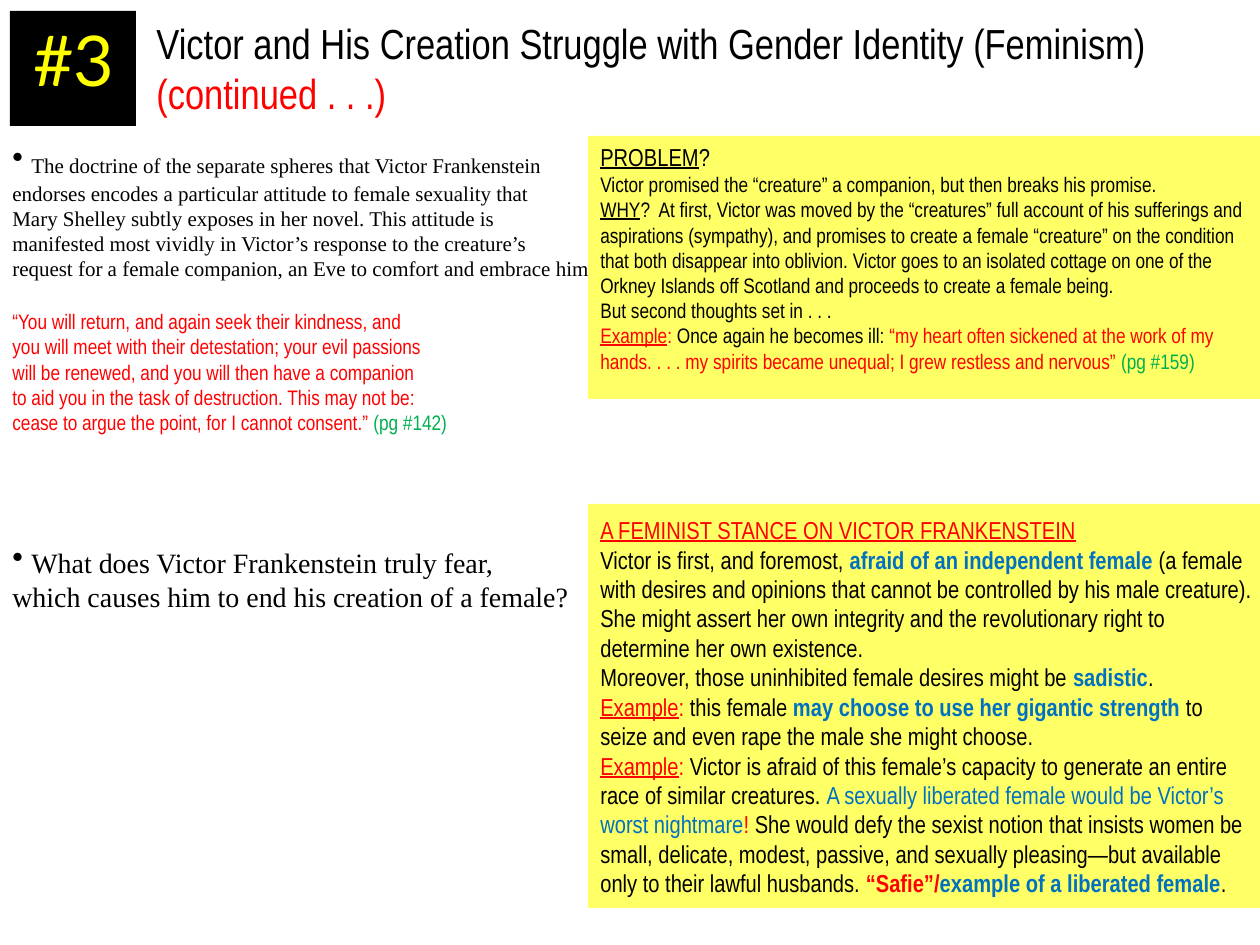
from dataclasses import dataclass
from typing import NamedTuple

import pptx
import pptx.dml.color
import pptx.enum.shapes
import pptx.enum.text
import pptx.oxml
import pptx.oxml.ns
import pptx.util

RGB = pptx.dml.color.RGBColor
BLACK = RGB(0x00, 0x00, 0x00)
RED = RGB(0xFF, 0x00, 0x00)
GREEN = RGB(0x00, 0xB0, 0x50)
BLUE = RGB(0x00, 0x70, 0xC0)
YELLOW = RGB(0xFF, 0xFF, 0x00)
LEMON = RGB(0xFF, 0xFF, 0x66)

PX = pptx.util.Inches(1) / 126
SERIF, SANS, BADGE = "Times New Roman", "Arial Narrow", "Lato"
LEFT = pptx.enum.text.PP_ALIGN.LEFT
CENTER = pptx.enum.text.PP_ALIGN.CENTER


class Rect(NamedTuple):
    x: int
    y: int
    w: int
    h: int


class Run(NamedTuple):
    text: str
    color: RGB = BLACK
    bold: bool = False
    line: bool = False
    size: int = 0


@dataclass
class Para:
    runs: list[Run]
    size: int
    face: str = SANS
    gap: int = 0
    bullet: bool = False
    hang: int = 0


@dataclass
class Block:
    rect: Rect
    paras: list[Para]
    wrap: bool = True
    align: int = LEFT


def emu(px: int) -> int:
    return round(px * PX)


def place(rect: Rect) -> list[int]:
    return [emu(side) for side in rect]


def plain(text: str, size: int, face: str = SANS, color: RGB = BLACK) -> list[Para]:
    """Make one paragraph of a single run for each line of text."""
    return [Para([Run(row, color)], size, face) for row in text.splitlines()]


def point(text: str, size: int) -> Para:
    return Para([Run(" ", size=18), Run(text)], size, SERIF, bullet=True)


def label(text: str, color: RGB = RED) -> Run:
    return Run(text, color, line=True)


def strong(text: str, color: RGB = BLUE) -> Run:
    return Run(text, color, bold=True)


def draw_rect(shapes, rect: Rect, color: RGB) -> None:
    shape = shapes.add_shape(pptx.enum.shapes.MSO_SHAPE.RECTANGLE, *place(rect))
    shape.shadow.inherit = False
    shape.fill.solid()
    shape.fill.fore_color.rgb = color
    shape.line.fill.background()


def draw_para(par, para: Para, align: int) -> None:
    par.alignment = align
    if para.gap:
        par.space_before = pptx.util.Pt(para.gap)
    props = par._p.get_or_add_pPr()
    if para.hang:
        props.set("marL", str(emu(para.hang)))
        props.set("indent", str(-emu(para.hang)))
    if para.bullet:
        mark = pptx.oxml.parse_xml(f'<a:buChar {pptx.oxml.ns.nsdecls("a")} char="•"/>')
        props.append(mark)
    for run in para.runs:
        part = par.add_run()
        part.text = run.text
        form = {"name": para.face, "size": pptx.util.Pt(run.size or para.size),
                "bold": run.bold, "underline": run.line}
        for key, value in form.items():
            setattr(part.font, key, value)
        part.font.color.rgb = run.color


def draw_block(shapes, block: Block) -> None:
    frame = shapes.add_textbox(*place(block.rect)).text_frame
    frame.word_wrap = block.wrap
    frame.auto_size = pptx.enum.text.MSO_AUTO_SIZE.SHAPE_TO_FIT_TEXT
    for i, para in enumerate(block.paras):
        par = frame.add_paragraph() if i else frame.paragraphs[0]
        draw_para(par, para, block.align)


SPHERES = """\
endorses encodes a particular attitude to female sexuality that
Mary Shelley subtly exposes in her novel. This attitude is
manifested most vividly in Victor’s response to the creature’s
request for a female companion, an Eve to comfort and embrace him."""

QUOTE = """\
you will meet with their detestation; your evil passions
will be renewed, and you will then have a companion
to aid you in the task of destruction. This may not be:"""

DOCTRINE = Block(Rect(0, 136, 616, 344), [
    point("The doctrine of the separate spheres that Victor Frankenstein", 12),
    *plain(SPHERES, 12, SERIF),
    Para([Run("“You will return, and again seek their kindness, and", RED)], 12, gap=16),
    *plain(QUOTE, 12, color=RED),
    Para([Run("cease to argue the point, for I cannot consent.” ", RED),
          Run("(pg #142)", GREEN)], 12),
], wrap=False)

PROBLEM = Block(Rect(588, 136, 683, 246), [
    Para([label("PROBLEM", BLACK), Run("?")], 14),
    *plain("Victor promised the “creature” a companion, but then breaks his promise.", 12),
    Para([label("WHY", BLACK),
          Run("?  At first, Victor was moved by the “creatures” full account of his "
              "sufferings and aspirations (sympathy), and promises to create a female "
              "“creature” on the condition that both disappear into oblivion. Victor "
              "goes to an isolated cottage on one of the Orkney Islands off Scotland "
              "and proceeds to create a female being.")], 12),
    *plain("But second thoughts set in . . .", 12),
    Para([label("Example"), Run(": ", RED), Run("Once again he becomes ill: "),
          Run("“my heart often sickened at the work of my hands. . . . my spirits "
              "became unequal; I grew restless and nervous” ", RED),
          Run("(pg #159)", GREEN)], 12),
])

TITLE = Block(Rect(144, 11, 1116, 115), [
    Para([Run("Victor and His Creation Struggle with Gender Identity (Feminism)")],
         24, hang=78),
    Para([Run("(continued . . .)", RED)], 24, hang=78),
])

NUMBER = Block(Rect(-10, 10, 168, 136), [Para([Run("#3", YELLOW)], 40, BADGE)],
               align=CENTER)

FEAR = Block(Rect(0, 536, 590, 84), [
    point("What does Victor Frankenstein truly fear,", 16),
    *plain("which causes him to end his creation of a female?", 16, SERIF),
], wrap=False)

STANCE = Block(Rect(588, 509, 683, 398), [
    Para([label("A FEMINIST STANCE ON VICTOR FRANKENSTEIN")], 14),
    Para([Run("Victor is first, and foremost, "),
          strong("afraid of an independent female "), Run("(a female")], 14),
    *plain("with desires and opinions that cannot be controlled by his male creature).", 14),
    *plain("She might assert her own integrity and the revolutionary right to "
           "determine her own existence.", 14),
    Para([Run("Moreover, those uninhibited female desires might be "),
          strong("sadistic"), Run(".")], 14),
    Para([label("Example"), Run(":", RED), Run(" this female "),
          strong("may choose to use her gigantic strength "), Run("to")], 14),
    *plain("seize and even rape the male she might choose.", 14),
    Para([label("Example"), Run(": ", RED),
          Run("Victor is afraid of this female’s capacity to generate an entire race "
              "of similar creatures. "),
          Run("A sexually liberated female would be Victor’s worst nightmare", BLUE),
          Run("! ", RED),
          Run("She would defy the sexist notion that insists women be small, delicate, "
              "modest, passive, and sexually pleasing―but available only to their "
              "lawful husbands. "),
          strong("“Safie”/", RED), strong("example of a liberated female"),
          Run(".")], 14),
])


def main() -> None:
    deck = pptx.Presentation()
    deck.slide_width, deck.slide_height = emu(1260), emu(945)
    shapes = deck.slides.add_slide(deck.slide_layouts[6]).shapes

    draw_block(shapes, DOCTRINE)
    draw_rect(shapes, Rect(588, 136, 672, 263), LEMON)
    draw_block(shapes, PROBLEM)
    draw_block(shapes, TITLE)
    badge = shapes.add_group_shape().shapes
    draw_rect(badge, Rect(10, 11, 126, 115), BLACK)
    draw_block(badge, NUMBER)
    draw_block(shapes, FEAR)
    draw_rect(shapes, Rect(588, 504, 672, 404), LEMON)
    draw_block(shapes, STANCE)

    deck.save("out.pptx")


if __name__ == "__main__":
    main()
